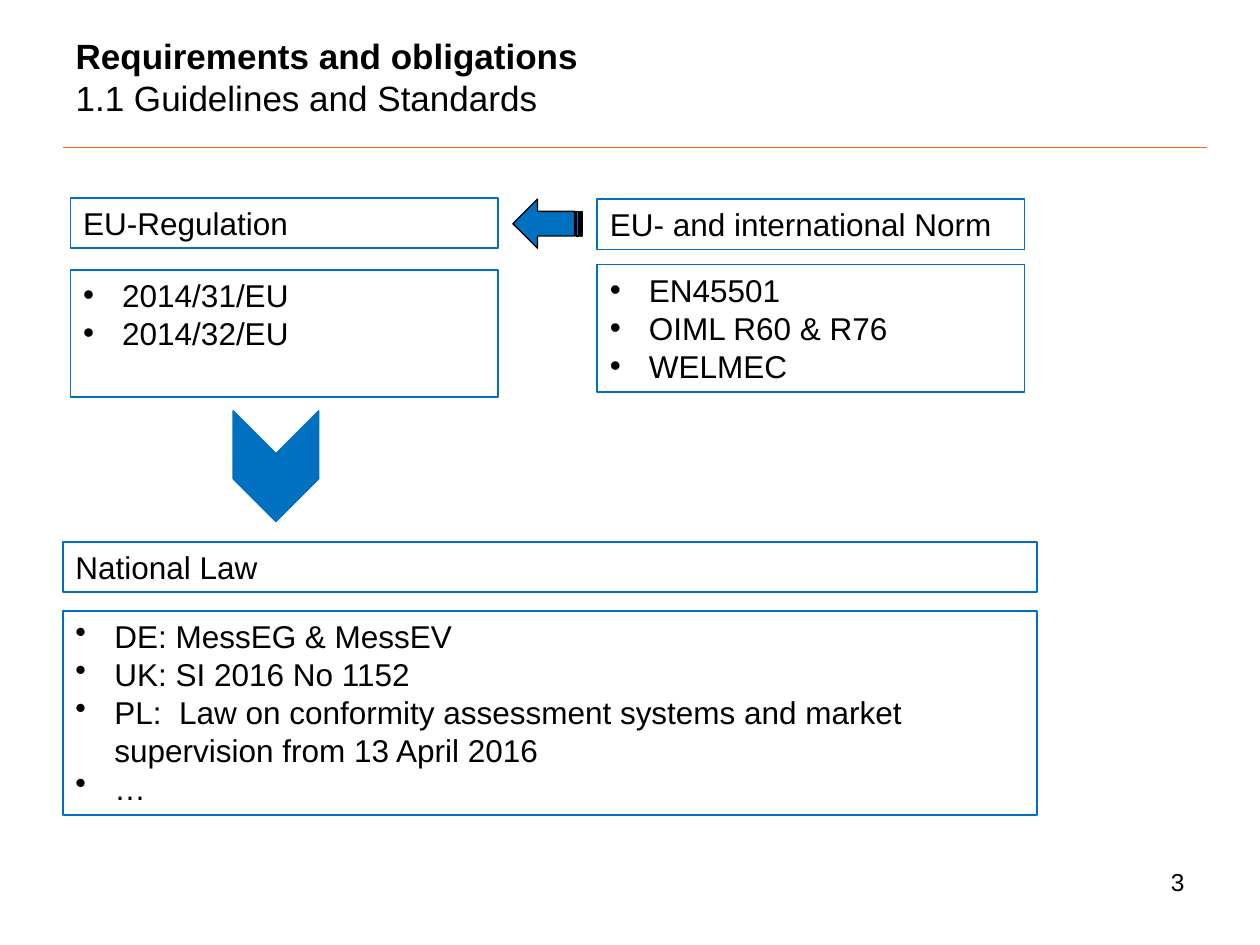
from pptx import Presentation
from pptx.dml.color import RGBColor
from pptx.enum.shapes import MSO_CONNECTOR, MSO_SHAPE
from pptx.enum.text import MSO_ANCHOR, MSO_AUTO_SIZE, PP_ALIGN
from pptx.oxml.ns import qn
from pptx.util import Inches, Pt
from lxml.etree import SubElement

COLORS = {"text": "000000", "blue": "0070C0", "orange": "FF6600"}
FONT = "Arial"
COLS, ROWS = 100, 75

prs = Presentation()
prs.slide_width, prs.slide_height = Inches(10), Inches(7.5)


def color(name):
    return RGBColor.from_string(COLORS[name])


def grid(x, y, w, h):
    col, row = prs.slide_width / COLS, prs.slide_height / ROWS
    return [round(v) for v in (x * col, y * row, w * col, h * row)]


def place(sp, box):
    sp.left, sp.top, sp.width, sp.height = grid(*box)


def write(sp, lines, size, anchor=MSO_ANCHOR.TOP, align=PP_ALIGN.LEFT, bullet=False):
    tf = sp.text_frame
    tf.word_wrap = True
    tf.auto_size = MSO_AUTO_SIZE.NONE
    tf.vertical_anchor = anchor
    for i, line in enumerate(lines):
        p = tf.add_paragraph() if i else tf.paragraphs[0]
        p.text = line
        p.alignment = align
        p.space_before = Pt(0)
        if bullet:
            pPr = p._p.get_or_add_pPr()
            pPr.set("marL", str(Inches(0.31)))
            pPr.set("indent", str(-Inches(0.31)))
            SubElement(pPr, qn("a:buChar"), char="•")
        for r in p.runs:
            r.font.name, r.font.size, r.font.bold = FONT, Pt(size), False
            r.font.color.rgb = color("text")


def add_header(s, box):
    x, y, w, h = box
    title = s.shapes.title
    place(title, (x, y, 57.6, 6.9))
    write(title, ["Requirements and obligations", "1.1 Guidelines and Standards"],
          20, MSO_ANCHOR.BOTTOM)
    title.text_frame.paragraphs[0].runs[0].font.bold = True
    left, top, width, height = grid(*box)
    rule = s.shapes.add_connector(MSO_CONNECTOR.STRAIGHT, left, top + height,
                                  left + width, top + height)
    rule.line.color.rgb = color("orange")
    rule.line.width = Pt(0.75)
    SubElement(rule._element.spPr, qn("a:effectLst"))


def add_panel(head, body, box, gap, heading, items):
    x, y, w, h = box
    head_h = 4
    body_y = head_h + gap
    place(head, (x, y, w, head_h))
    place(body, (x, y + body_y, w, h - body_y))
    write(head, [heading], 18)
    write(body, items, 18, bullet=True)
    for sp in (head, body):
        sp.line.color.rgb = color("blue")
        sp.line.width = Pt(1)


def add_arrow(s, kind, box, rotation, outline):
    sp = s.shapes.add_shape(kind, *grid(*box))
    sp.rotation = rotation
    sp.shadow.inherit = False
    sp.fill.solid()
    sp.fill.fore_color.rgb = color("blue")
    sp.line.color.rgb = color(outline)
    sp.line.width = Pt(0.75)


def add_page_number(s, box, number):
    write(s.shapes.add_textbox(*grid(*box)), [number], 14, align=PP_ALIGN.RIGHT)


def build_slide():
    s = prs.slides.add_slide(prs.slide_layouts.get_by_name("Comparison"))
    ph = s.placeholders
    add_header(s, (5, 3, 90.8, 8.7))
    add_panel(ph[1], ph[2], (5.6, 15.7, 33.9, 15.8), 1.7, "EU-Regulation",
              ["2014/31/EU", "2014/32/EU"])
    add_panel(ph[3], ph[4], (47.4, 15.8, 33.9, 15.3), 1.2, "EU- and international Norm",
              ["EN45501", "OIML R60 & R76", "WELMEC"])
    law = (5, 43, 77.3, 21.7)
    head, body = (s.shapes.add_textbox(*grid(*law)) for _ in range(2))
    add_panel(head, body, law, 1.5, "National Law",
              ["DE: MessEG & MessEV", "UK: SI 2016 No 1152",
               "PL:  Law on conformity assessment systems and market\v"
               "supervision from 13 April 2016", "…"])
    add_arrow(s, MSO_SHAPE.CHEVRON, (17.5, 33.6, 8.8, 6.8), 90, "blue")
    add_arrow(s, MSO_SHAPE.STRIPED_RIGHT_ARROW, (40.7, 15.8, 5.5, 3.9), 180, "text")
    add_page_number(s, (71.7, 68.3, 23.3, 5.2), "3")


if __name__ == "__main__":
    build_slide()
    prs.save("out.pptx")
